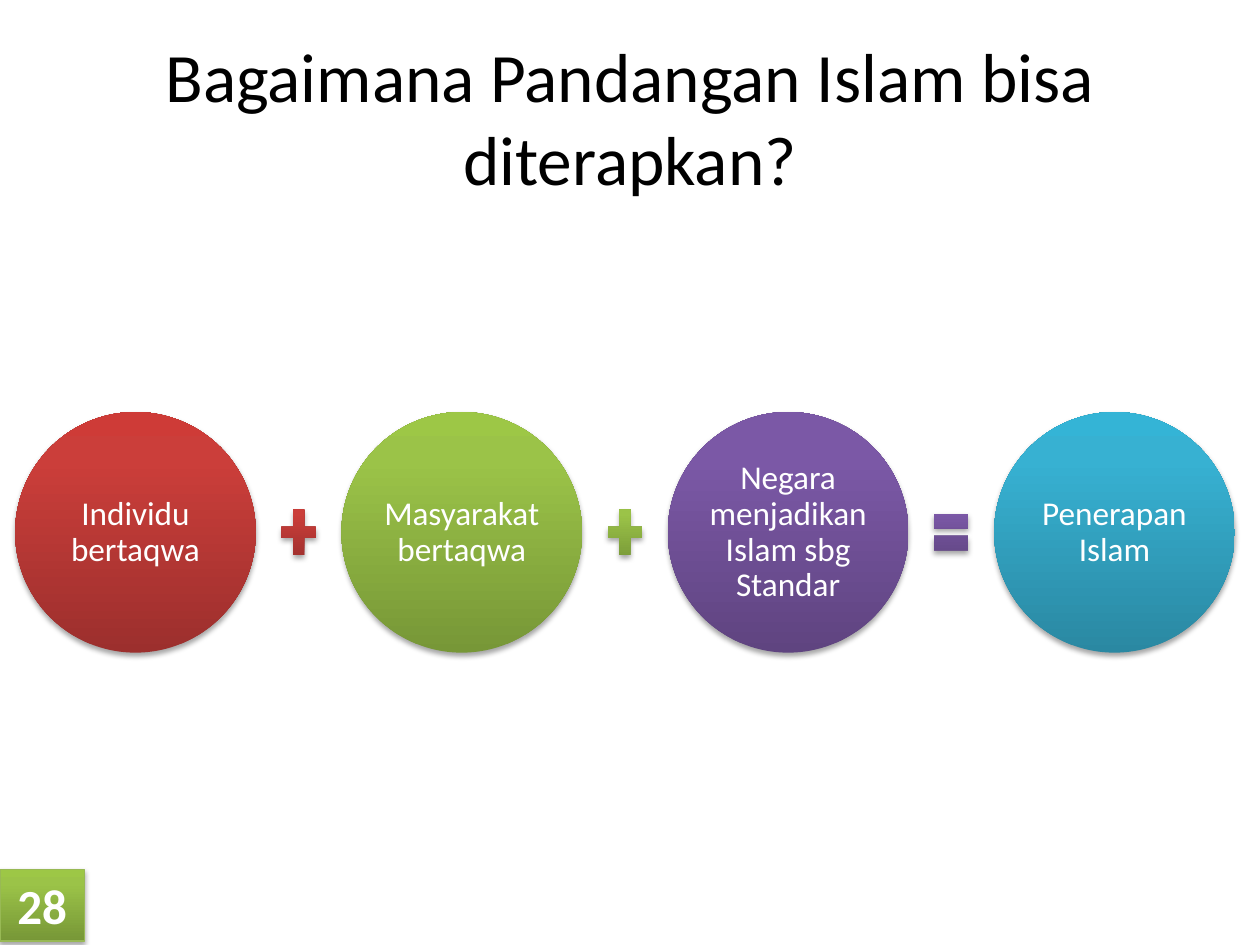
from pptx import Presentation
from pptx.dml.color import RGBColor
from pptx.enum.shapes import MSO_SHAPE
from pptx.enum.text import MSO_ANCHOR, PP_ALIGN
from pptx.oxml import parse_xml
from pptx.oxml.ns import nsdecls
from pptx.util import Inches, Pt

COLORS = {"black": "000000", "white": "FFFFFF", "border": "98B955"}
GRADIENTS = {
    "red": ("9C2F2D", "CB3E3A", "CE3B37"),
    "green": ("779737", "9BC348", "9DC746"),
    "purple": ("5F4480", "7B58A6", "7C57A8"),
    "blue": ("2A88A2", "37B1D2", "34B4D6"),
}
STOPS = (0, 80, 100)
FONT = "Calibri"

LEFT, PITCH, MIDDLE = 0.12, 2.59, 4.225
CIRCLE = 1.91
SIGN_W, SIGN_H = 0.37, 0.49
GAP = (PITCH - CIRCLE - SIGN_W) / 2

TERMS = [
    ("Individu bertaqwa", "red", MSO_SHAPE.MATH_PLUS),
    ("Masyarakat bertaqwa", "green", MSO_SHAPE.MATH_PLUS),
    ("Negara menjadikan Islam sbg Standar", "purple", MSO_SHAPE.MATH_EQUAL),
    ("Penerapan Islam", "blue", None),
]


def set_text(sp, text, size, color, bold=False, inset=None, spacing=None):
    tf = sp.text_frame
    tf.text = text
    tf.word_wrap = True
    tf.vertical_anchor = MSO_ANCHOR.MIDDLE
    if inset is not None:
        tf.margin_left = tf.margin_right = Inches(inset)
        tf.margin_top = tf.margin_bottom = Inches(inset)
    p = tf.paragraphs[0]
    p.alignment = PP_ALIGN.CENTER
    if spacing:
        p.line_spacing = spacing
    font = p.runs[0].font
    font.name = FONT
    font.size = Pt(size)
    font.bold = bold
    font.color.rgb = RGBColor.from_string(COLORS[color])


def add_glossy(s, kind, x, y, w, h, gradient):
    sp = s.shapes.add_shape(kind, Inches(x), Inches(y), Inches(w), Inches(h))
    spPr = sp.element.spPr
    stops = "".join(
        f'<a:gs pos="{pos * 1000}"><a:srgbClr val="{color}"/></a:gs>'
        for pos, color in zip(STOPS, GRADIENTS[gradient])
    )
    spPr.append(parse_xml(
        f'<a:gradFill {nsdecls("a")} rotWithShape="1"><a:gsLst>{stops}</a:gsLst>'
        '<a:lin ang="16200000" scaled="0"/></a:gradFill>'
    ))
    sp.line.fill.background()
    spPr.append(parse_xml(
        f'<a:effectLst {nsdecls("a")}><a:outerShdw blurRad="{Pt(3.1)}" '
        f'dist="{Pt(1.8)}" dir="5400000" rotWithShape="0"><a:srgbClr val="000000">'
        '<a:alpha val="35000"/></a:srgbClr></a:outerShdw></a:effectLst>'
    ))
    return sp


def add_title(s, text):
    sp = s.shapes.add_textbox(Inches(0.5), Inches(0.3), Inches(9), Inches(1.25))
    set_text(sp, text, 39.6, "black")


def add_term(s, column, text, gradient, sign):
    x = LEFT + column * PITCH
    sp = add_glossy(s, MSO_SHAPE.OVAL, x, MIDDLE - CIRCLE / 2, CIRCLE, CIRCLE, gradient)
    set_text(sp, text, 19, "white", inset=0.03, spacing=0.9)
    if sign is not None:
        add_glossy(s, sign, x + CIRCLE + GAP, MIDDLE - SIGN_H / 2, SIGN_W, SIGN_H, gradient)


def add_page_number(s, number):
    sp = add_glossy(s, MSO_SHAPE.RECTANGLE, 0, 6.9, 0.67, 0.57, "green")
    sp.line.color.rgb = RGBColor.from_string(COLORS["border"])
    sp.line.width = Pt(0.75)
    set_text(sp, number, 28, "white", bold=True)


def main():
    prs = Presentation()
    prs.slide_width, prs.slide_height = Inches(10), Inches(7.5)
    s = prs.slides.add_slide(prs.slide_layouts[6])
    add_title(s, "Bagaimana Pandangan Islam bisa diterapkan?")
    for column, term in enumerate(TERMS):
        add_term(s, column, *term)
    add_page_number(s, "28")
    prs.save("out.pptx")


if __name__ == "__main__":
    main()
